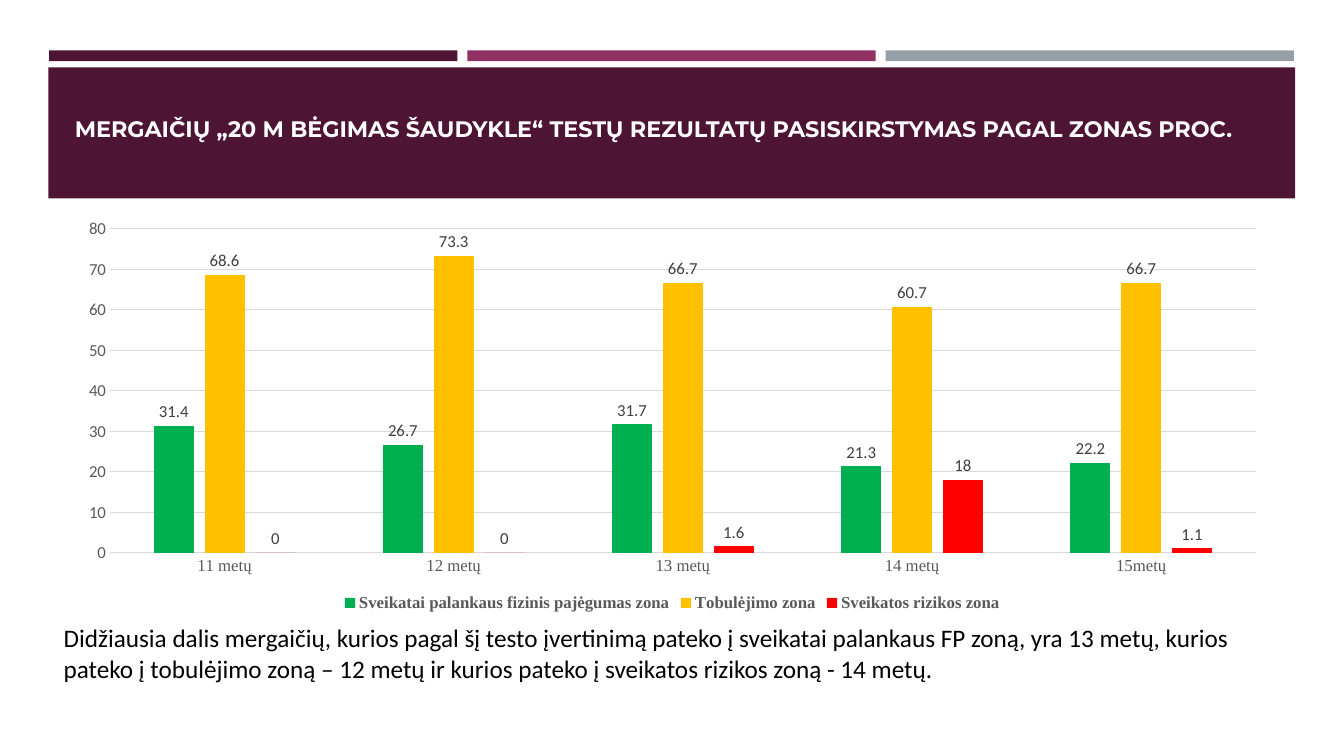
from lxml import etree
from pptx import Presentation
from pptx.chart.data import CategoryChartData
from pptx.dml.color import RGBColor
from pptx.enum.chart import XL_CHART_TYPE, XL_LABEL_POSITION, XL_LEGEND_POSITION, XL_TICK_MARK
from pptx.enum.shapes import MSO_SHAPE
from pptx.enum.text import MSO_ANCHOR, MSO_AUTO_SIZE, PP_ALIGN
from pptx.oxml.ns import qn
from pptx.util import Cm, Pt

COLUMNS = XL_CHART_TYPE.COLUMN_CLUSTERED
OUTSIDE_END = XL_LABEL_POSITION.OUTSIDE_END
LEGEND_BOTTOM = XL_LEGEND_POSITION.BOTTOM
NO_TICK = XL_TICK_MARK.NONE
RECTANGLE = MSO_SHAPE.RECTANGLE
TOP, BOTTOM = MSO_ANCHOR.TOP, MSO_ANCHOR.BOTTOM
NO_AUTOFIT = MSO_AUTO_SIZE.NONE
LEFT = PP_ALIGN.LEFT

PLUM = RGBColor(0x4D, 0x14, 0x34)
BERRY = RGBColor(0x90, 0x31, 0x63)
STEEL = RGBColor(0x96, 0x9F, 0xA7)
WHITE = RGBColor(0xFF, 0xFF, 0xFF)
BLACK = RGBColor(0x00, 0x00, 0x00)
AXIS_TEXT = RGBColor(0x59, 0x59, 0x59)
LABEL_TEXT = RGBColor(0x40, 0x40, 0x40)
GRID = RGBColor(0xD9, 0xD9, 0xD9)
GREEN = RGBColor(0x00, 0xB0, 0x50)
AMBER = RGBColor(0xFF, 0xC0, 0x00)
RED = RGBColor(0xFF, 0x00, 0x00)

SANS, SERIF, HEADING = "Calibri", "Times New Roman", "Montserrat"

TITLE = "MERGAIČIŲ „20 M BĖGIMAS ŠAUDYKLE“ TESTŲ REZULTATŲ PASISKIRSTYMAS PAGAL ZONAS PROC."
SUMMARY = ("Didžiausia dalis mergaičių, kurios pagal šį testo įvertinimą pateko į sveikatai "
           "palankaus FP zoną, yra 13 metų, kurios pateko į tobulėjimo zoną – 12 metų ir "
           "kurios pateko į sveikatos rizikos zoną - 14 metų.")
AGES = ["11 metų", "12 metų", "13 metų", "14 metų", "15metų"]
ZONES = [
    ("Sveikatai palankaus fizinis pajėgumas zona", GREEN, (31.4, 26.7, 31.7, 21.3, 22.2)),
    ("Tobulėjimo zona", AMBER, (68.6, 73.3, 66.7, 60.7, 66.7)),
    ("Sveikatos rizikos zona", RED, (0, 0, 1.6, 18, 1.1)),
]


def style_font(font, name=SANS, size=12, color=AXIS_TEXT, bold=False):
    font.name, font.size, font.bold = name, Pt(size), bold
    font.color.rgb = color


def style_line(line, color=GRID, width=0.75):
    line.color.rgb = color
    line.width = Pt(width)


class ResultsSlide:
    def __init__(self, deck):
        self.slide = deck.slides.add_slide(deck.slide_layouts[1])
        self.shapes = self.slide.shapes

    def bar(self, left, top, width, height, color):
        bar = self.shapes.add_shape(RECTANGLE, Cm(left), Cm(top), Cm(width), Cm(height))
        bar.shadow.inherit = False
        bar.fill.solid()
        bar.fill.fore_color.rgb = color
        bar.line.fill.background()

    def text(self, index, content, box, anchor, margin_top=0.13, margin_bottom=0.13, **font):
        """Fill a template placeholder and bring it to the front, without a bullet."""
        holder = self.slide.placeholders[index]
        holder.left, holder.top, holder.width, holder.height = map(Cm, box)
        frame = holder.text_frame
        frame.text = content
        frame.word_wrap = True
        frame.auto_size = NO_AUTOFIT
        frame.vertical_anchor = anchor
        frame.margin_top, frame.margin_bottom = Cm(margin_top), Cm(margin_bottom)
        paragraph = frame.paragraphs[0]
        paragraph.alignment = LEFT
        paragraph.space_before = Pt(0)
        properties = paragraph._p.get_or_add_pPr()
        properties.set("marL", "0")
        properties.set("indent", "0")
        etree.SubElement(properties, qn("a:buNone"))
        style_font(paragraph.runs[0].font, **font)
        holder.element.getparent().append(holder.element)

    def column_chart(self, categories, zones, box):
        data = CategoryChartData()
        data.categories = categories
        for name, _, values in zones:
            data.add_series(name, values)
        chart = self.shapes.add_chart(COLUMNS, *map(Cm, box), data).chart
        chart.has_title = False
        style_font(chart.font, size=10, color=BLACK)
        chart.has_legend = True
        chart.legend.position = LEGEND_BOTTOM
        chart.legend.include_in_layout = False
        style_font(chart.legend.font, name=SERIF, bold=True)

        ages, percent = chart.category_axis, chart.value_axis
        for axis, font in ((ages, SERIF), (percent, SANS)):
            axis.major_tick_mark = axis.minor_tick_mark = NO_TICK
            style_font(axis.tick_labels.font, name=font)
        style_line(ages.format.line)
        percent.format.line.fill.background()
        percent.minimum_scale, percent.maximum_scale, percent.major_unit = 0, 80, 10
        style_line(percent.major_gridlines.format.line)

        plot = chart.plots[0]
        plot.gap_width, plot.overlap, plot.vary_by_categories = 219, -27, False
        for series, (_, color, _) in zip(plot.series, zones):
            series.format.fill.solid()
            series.format.fill.fore_color.rgb = color
            series.invert_if_negative = False
            labels = series.data_labels
            labels.show_value = True
            labels.position = OUTSIDE_END
            style_font(labels.font, color=LABEL_TEXT)


def main():
    deck = Presentation()
    deck.slide_width, deck.slide_height = Cm(33.87), Cm(19.05)
    results = ResultsSlide(deck)
    for column, color in enumerate((PLUM, BERRY, STEEL)):
        results.bar(1.24 + column * 10.54, 1.27, 10.29, 0.27, color)
    results.bar(1.22, 1.7, 31.42, 3.3, PLUM)
    results.text(0, TITLE, (1.63, 1.55, 30.63, 2.82), BOTTOM, margin_bottom=0.79,
                 name=HEADING, size=16, color=WHITE, bold=True)
    results.column_chart(AGES, ZONES, (1.63, 5.31, 30.63, 10.21))
    results.text(1, SUMMARY, (1.35, 15.06, 30.63, 3.73), TOP, margin_top=0.63,
                 size=18, color=BLACK)
    deck.save("out.pptx")


if __name__ == "__main__":
    main()
